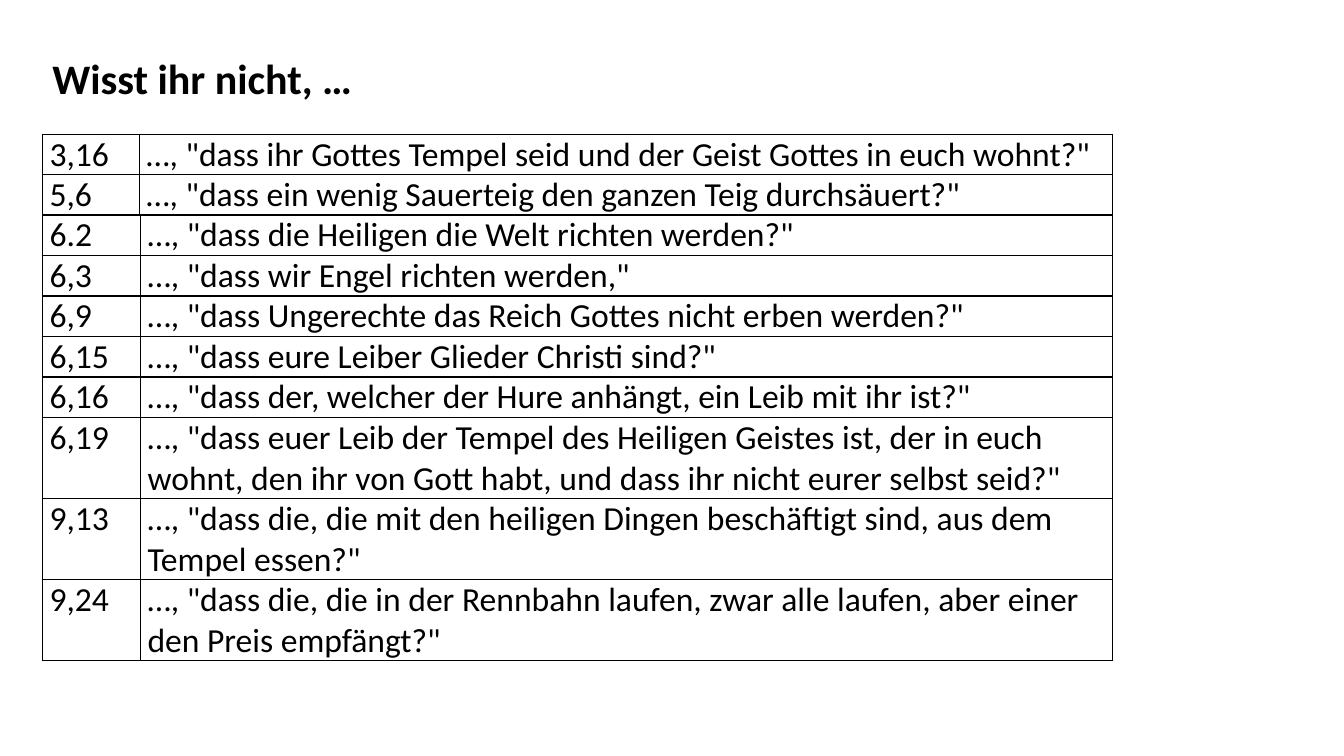
from lxml import etree
from pptx import Presentation
from pptx.dml.color import RGBColor
from pptx.enum.text import MSO_AUTO_SIZE
from pptx.oxml.ns import qn
from pptx.util import Cm, Pt

BLACK = RGBColor(0x00, 0x00, 0x00)
WHITE = RGBColor(0xFF, 0xFF, 0xFF)
FIT_SHAPE = MSO_AUTO_SIZE.SHAPE_TO_FIT_TEXT
TITLE_FORMAT = {"name": "Calibri", "size": Pt(30), "bold": True}
VERSE_FORMAT = {"name": "Calibri", "size": Pt(24), "bold": False}
CELL_MARGINS = {
    "margin_left": Cm(0.18),
    "margin_right": Cm(0.18),
    "margin_top": 0,
    "margin_bottom": 0,
}
LEFT = Cm(1.07)
TABLE_TOP = Cm(3.38)
TABLE_WIDTH = Cm(26.97)
LINE_HEIGHT = Cm(1.02)

OPENING_VERSES = [
    ("3,16", '…, "dass ihr Gottes Tempel seid und der Geist Gottes in euch wohnt?"', 1),
    ("5,6", '…, "dass ein wenig Sauerteig den ganzen Teig durchsäuert?"', 1),
]
FURTHER_VERSES = [
    ("6.2", '…, "dass die Heiligen die Welt richten werden?"', 1),
    ("6,3", '…, "dass wir Engel richten werden,"', 1),
    ("6,9", '…, "dass Ungerechte das Reich Gottes nicht erben werden?"', 1),
    ("6,15", '…, "dass eure Leiber Glieder Christi sind?"', 1),
    ("6,16", '…, "dass der, welcher der Hure anhängt, ein Leib mit ihr ist?"', 1),
    ("6,19", '…, "dass euer Leib der Tempel des Heiligen Geistes ist, der in euch '
             'wohnt, den ihr von Gott habt, und dass ihr nicht eurer selbst seid?"', 2),
    ("9,13", '…, "dass die, die mit den heiligen Dingen beschäftigt sind, aus dem '
             'Tempel essen?"', 2),
    ("9,24", '…, "dass die, die in der Rennbahn laufen, zwar alle laufen, aber einer '
             'den Preis empfängt?"', 2),
]


def set_attributes(target, values):
    """Set every attribute of the target from a dict."""
    for name, value in values.items():
        setattr(target, name, value)


def write_text(para, text, font_format):
    """Put one formatted span of black text into a paragraph."""
    span = para.add_run()
    span.text = text
    set_attributes(span.font, font_format)
    span.font.color.rgb = BLACK


def add_borders(cell):
    """Draw a thin black line on all four sides of a cell."""
    properties = cell._tc.get_or_add_tcPr()
    for index, side in enumerate(("a:lnL", "a:lnR", "a:lnT", "a:lnB")):
        line = etree.Element(qn(side), w=str(Pt(1)))
        fill = etree.SubElement(line, qn("a:solidFill"))
        etree.SubElement(fill, qn("a:srgbClr"), val=str(BLACK))
        properties.insert(index, line)


def add_title(page, left, top, width, height):
    """Place the heading in the given box."""
    box = page.shapes.add_textbox(left, top, width, height)
    box.text_frame.word_wrap = True
    box.text_frame.auto_size = FIT_SHAPE
    para = box.text_frame.paragraphs[0]
    para.line_spacing = 1.07
    write_text(para, "Wisst ihr nicht, …", TITLE_FORMAT)


def add_verses(page, verses, left, top, width, reference_width):
    """Place a two-column verse table and return its bottom edge."""
    height = LINE_HEIGHT * sum(lines for _, _, lines in verses)
    table = page.shapes.add_table(len(verses), 2, left, top, width, height).table
    table.first_row = False
    table.horz_banding = False
    table.columns[0].width = reference_width
    table.columns[1].width = width - reference_width
    for row, (reference, quote, lines) in zip(table.rows, verses):
        row.height = LINE_HEIGHT * lines
        for cell, text in zip(row.cells, (reference, quote)):
            set_attributes(cell, CELL_MARGINS)
            cell.fill.background()
            add_borders(cell)
            write_text(cell.text_frame.paragraphs[0], text, VERSE_FORMAT)
    return top + height


def main():
    """Build the slide and save the deck."""
    deck = Presentation()
    deck.slide_width, deck.slide_height = Cm(33.87), Cm(19.05)
    page = deck.slides.add_slide(deck.slide_layouts[6])
    page.background.fill.solid()
    page.background.fill.fore_color.rgb = WHITE
    add_title(page, LEFT, Cm(1.12), Cm(16.94), Cm(1.57))
    bottom = add_verses(page, OPENING_VERSES, LEFT, TABLE_TOP, TABLE_WIDTH, Cm(2.44))
    add_verses(page, FURTHER_VERSES, LEFT, bottom, TABLE_WIDTH, Cm(2.47))
    deck.save("out.pptx")


if __name__ == "__main__":
    main()
